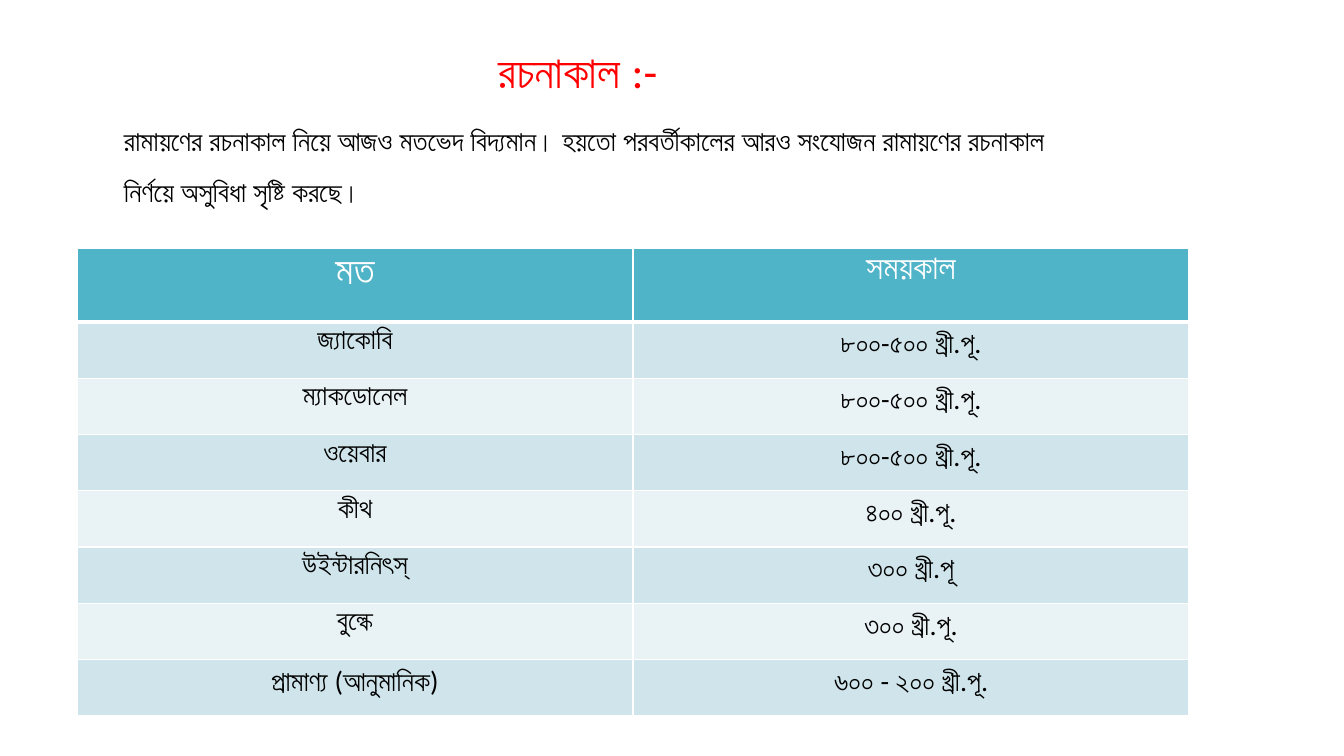
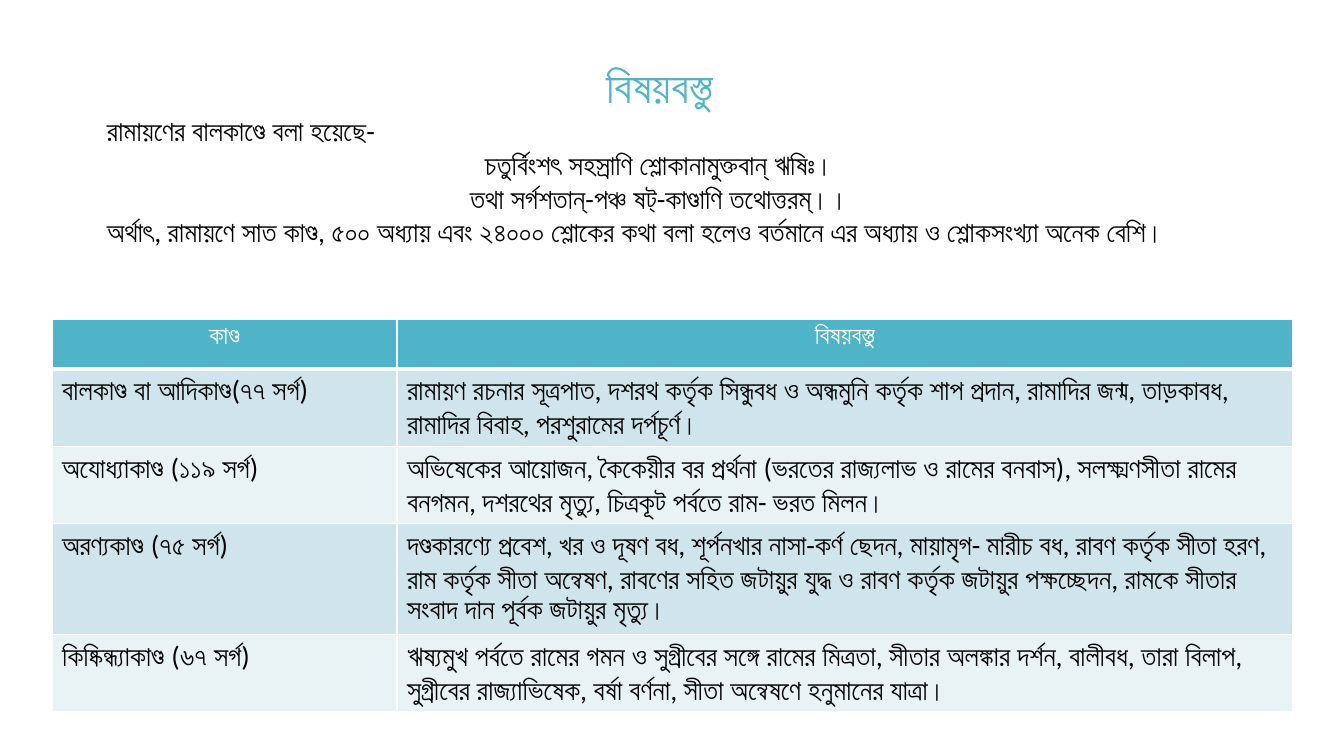
from dataclasses import dataclass

from lxml.etree import SubElement
from pptx import Presentation
from pptx.dml.color import RGBColor
from pptx.enum.text import MSO_ANCHOR, PP_ALIGN as Align
from pptx.oxml.ns import qn
from pptx.slide import Slide
from pptx.table import _Cell as Cell
from pptx.text.text import TextFrame
from pptx.util import Emu, Pt

FONT = "Calibri"
TEAL, WHITE, BLACK, RED = "50B4C8", "FFFFFF", "000000", "FF0000"
BANDS = ("D0E5EB", "E9F2F5")
TITLE_SIZE, BODY_SIZE = 32, 20
EMU_PER_PX = 914400 / 100.8


@dataclass(frozen=True)
class Box:
    left: int
    top: int
    width: int
    height: int

    def emu(self) -> tuple[Emu, Emu, Emu, Emu]:
        return px(self.left), px(self.top), px(self.width), px(self.height)


@dataclass(frozen=True)
class Title:
    text: str
    box: Box
    color: str
    bold: bool = False


@dataclass(frozen=True)
class Line:
    text: str
    align: Align = Align.LEFT
    spacing: int | None = None


@dataclass(frozen=True)
class Grid:
    box: Box
    columns: tuple[int, ...]
    header_height: int
    header_sizes: tuple[int, ...]
    align: Align
    rows: tuple[tuple[str, ...], ...]


@dataclass(frozen=True)
class Page:
    title: Title
    intro_box: Box
    intro: tuple[Line, ...]
    grid: Grid


def px(length: float) -> Emu:
    return Emu(round(length * EMU_PER_PX))


def rgb(color: str) -> RGBColor:
    return RGBColor.from_string(color)


def write(frame: TextFrame, text: str, *, size: int = BODY_SIZE, color: str = BLACK,
          bold: bool = False, align: Align = Align.LEFT,
          spacing: int | None = None, append: bool = False) -> None:
    paragraph = frame.add_paragraph() if append else frame.paragraphs[0]
    paragraph.alignment = align
    if spacing:
        paragraph.line_spacing = Pt(spacing)
    run = paragraph.add_run()
    run.text = text
    run.font.name, run.font.size, run.font.bold = FONT, Pt(size), bold
    run.font.color.rgb = rgb(color)


def draw_title(slide: Slide, title: Title) -> None:
    heading = slide.shapes.title
    heading.left, heading.top, heading.width, heading.height = title.box.emu()
    heading.text_frame.vertical_anchor = MSO_ANCHOR.TOP
    write(heading.text_frame, title.text, size=TITLE_SIZE, color=title.color,
          bold=title.bold, align=Align.CENTER)


def draw_intro(slide: Slide, box: Box, lines: tuple[Line, ...]) -> None:
    frame = slide.shapes.add_textbox(*box.emu()).text_frame
    frame.word_wrap = True
    for index, line in enumerate(lines):
        write(frame, line.text, align=line.align, spacing=line.spacing, append=index > 0)


def style_cell(cell: Cell, fill: str, top: int, bottom: int) -> None:
    properties = cell._tc.get_or_add_tcPr()
    for side, points in (("L", 1), ("R", 1), ("T", top), ("B", bottom)):
        border = SubElement(properties, qn(f"a:ln{side}"), w=str(Pt(points)))
        SubElement(SubElement(border, qn("a:solidFill")), qn("a:srgbClr"), val=WHITE)
    cell.fill.solid()
    cell.fill.fore_color.rgb = rgb(fill)


def draw_grid(slide: Slide, grid: Grid) -> None:
    row_count = len(grid.rows)
    table = slide.shapes.add_table(row_count, len(grid.columns), *grid.box.emu()).table
    for column, width in zip(table.columns, grid.columns):
        column.width = px(width)
    row_height = (grid.box.height - grid.header_height) / (row_count - 1)
    for r, texts in enumerate(grid.rows):
        is_header = r == 0
        table.rows[r].height = px(grid.header_height if is_header else row_height)
        for c, text in enumerate(texts):
            cell = table.cell(r, c)
            style_cell(cell, TEAL if is_header else BANDS[(r - 1) % 2],
                       top=3 if r == 1 else 1, bottom=3 if is_header else 1)
            if is_header:
                write(cell.text_frame, text, size=grid.header_sizes[c], color=WHITE,
                      bold=True, align=Align.CENTER)
            else:
                write(cell.text_frame, text, align=grid.align)


PAGES = (
    Page(
        Title("রচনাকাল :-", Box(108, 39, 940, 65), RED),
        Box(114, 102, 940, 112),
        (Line("রামায়ণের রচনাকাল নিয়ে আজও মতভেদ বিদ্যমান। হয়তো পরবর্তীকালের আরও "
              "সংযোজন রামায়ণের রচনাকাল নির্ণয়ে অসুবিধা সৃষ্টি করছে।",
              Align.JUSTIFY, spacing=36),),
        Grid(Box(77, 248, 1112, 468), (556, 556), 74, (28, 24), Align.CENTER, (
            ("মত", "সময়কাল"),
            ("জ্যাকোবি", "৮০০-৫০০ খ্রী.পূ."),
            ("ম্যাকডোনেল", "৮০০-৫০০ খ্রী.পূ."),
            ("ওয়েবার", "৮০০-৫০০ খ্রী.পূ."),
            ("কীথ", "৪০০ খ্রী.পূ."),
            ("উইন্টারনিৎস্", "৩০০ খ্রী.পূ"),
            ("বুল্কে", "৩০০ খ্রী.পূ."),
            ("প্রামাণ্য (আনুমানিক)", "৬০০ - ২০০ খ্রী.পূ."),
        )),
    ),
    Page(
        Title("বিষয়বস্তু", Box(97, 54, 1125, 65), TEAL, bold=True),
        Box(97, 109, 1125, 179),
        (
            Line("রামায়ণের বালকাণ্ডে বলা হয়েছে-"),
            Line("চতুর্বিংশৎ সহস্রাণি শ্লোকানামুক্তবান্ ঋষিঃ।", Align.CENTER),
            Line("তথা সর্গশতান্-পঞ্চ ষট্-কাণ্ডাণি তথোত্তরম্।।", Align.CENTER),
            Line("অর্থাৎ, রামায়ণে সাত কাণ্ড, ৫০০ অধ্যায় এবং ২৪০০০ শ্লোকের কথা বলা হলেও "
                 "বর্তমানে এর অধ্যায় ও শ্লোকসংখ্যা অনেক বেশি।"),
        ),
        Grid(Box(52, 319, 1241, 250), (345, 896), 50, (18, 18), Align.LEFT, (
            ("কাণ্ড", "বিষয়বস্তু"),
            ("বালকাণ্ড বা আদিকাণ্ড(৭৭ সর্গ)",
             "রামায়ণ রচনার সূত্রপাত, দশরথ কর্তৃক সিন্ধুবধ ও অন্ধমুনি কর্তৃক শাপ প্রদান, "
             "রামাদির জন্ম, তাড়কাবধ, রামাদির বিবাহ, পরশুরামের দর্পচূর্ণ।"),
            ("অযোধ্যাকাণ্ড (১১৯ সর্গ)",
             "অভিষেকের আয়োজন, কৈকেয়ীর বর প্রর্থনা (ভরতের রাজ্যলাভ ও রামের বনবাস), "
             "সলক্ষ্মণসীতা রামের বনগমন, দশরথের মৃত্যু, চিত্রকূট পর্বতে রাম- ভরত মিলন।"),
            ("অরণ্যকাণ্ড (৭৫ সর্গ)",
             "দণ্ডকারণ্যে প্রবেশ, খর ও দূষণ বধ, শূর্পনখার নাসা-কর্ণ ছেদন, মায়ামৃগ- মারীচ বধ, "
             "রাবণ কর্তৃক সীতা হরণ, রাম কর্তৃক সীতা অন্বেষণ, রাবণের সহিত জটায়ুর যুদ্ধ ও "
             "রাবণ কর্তৃক জটায়ুর পক্ষচ্ছেদন, রামকে সীতার সংবাদ দান পূর্বক জটায়ুর মৃত্যু।"),
            ("কিষ্কিন্ধ্যাকাণ্ড (৬৭ সর্গ)",
             "ঋষ্যমুখ পর্বতে রামের গমন ও সুগ্রীবের সঙ্গে রামের মিত্রতা, সীতার অলঙ্কার দর্শন, "
             "বালীবধ, তারা বিলাপ, সুগ্রীবের রাজ্যাভিষেক, বর্ষা বর্ণনা, সীতা অন্বেষণে "
             "হনুমানের যাত্রা।"),
        )),
    ),
)


def main() -> None:
    deck = Presentation()
    deck.slide_width, deck.slide_height = px(1344), px(756)
    title_only = deck.slide_layouts[5]
    for page in PAGES:
        slide = deck.slides.add_slide(title_only)
        draw_title(slide, page.title)
        draw_intro(slide, page.intro_box, page.intro)
        draw_grid(slide, page.grid)
    deck.save("out.pptx")


if __name__ == "__main__":
    main()
